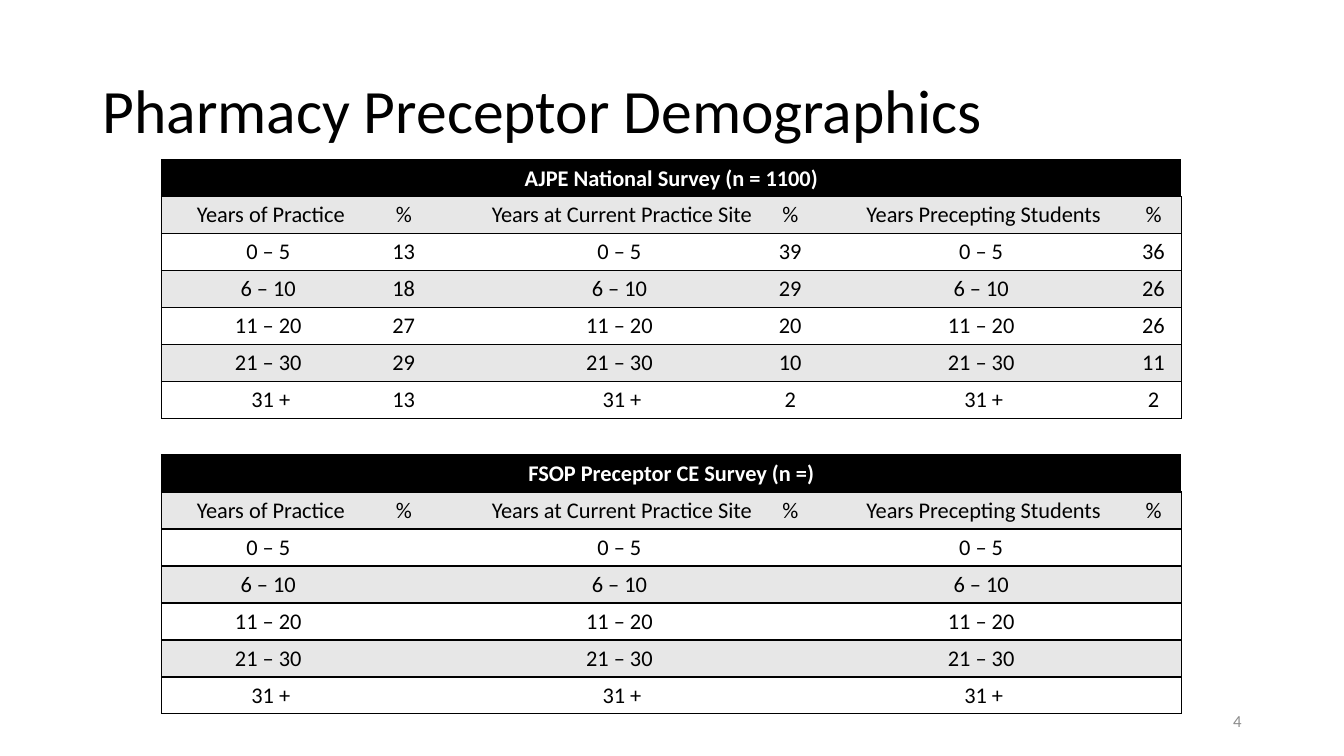
import pptx
import pptx.dml.color
import pptx.enum.text
import pptx.oxml.ns
import pptx.util
from lxml import etree

Pt = pptx.util.Pt
RGBColor = pptx.dml.color.RGBColor
ALIGN = pptx.enum.text.PP_ALIGN
MIDDLE = pptx.enum.text.MSO_ANCHOR.MIDDLE
qn = pptx.oxml.ns.qn

TITLE = "Pharmacy Preceptor Demographics"
SLIDE_NUMBER = "4"
HEADINGS = ["Years of Practice", "Years at Current Practice Site", "Years Precepting Students"]
YEAR_RANGES = ["0 – 5 ", "6 – 10 ", "11 – 20 ", "21 – 30 ", "31 +"]
# Each survey: heading, top edge, one list of percentages per year range
SURVEYS = [
    ("AJPE National Survey (n = 1100)", 114,
     [[13, 39, 36], [18, 29, 26], [27, 20, 26], [29, 10, 11], [13, 2, 2]]),
    ("FSOP Preceptor CE Survey (n =)", 325, [[""] * 3] * 5),
]

COLORS = {"black": "000000", "white": "FFFFFF", "band": "E7E7E7", "number": "8C8C8C"}
FONT = "Calibri"
TABLE_LEFT = 115.3
COLUMN_WIDTHS = [156.2, 33.8, 36, 205.9, 34.6, 19.4, 203, 39.6]
LABEL_COLUMNS = [0, 3, 6]
ROW_HEIGHT = 26.4
TABLE_TEXT_SIZE = 16
BORDER_WIDTH = 1
PLAIN_TABLE_STYLE = "{2D5ABB26-0587-4C30-8999-92F81FD0307C}"


def write(paragraph, text, size, color, alignment, bold=False):
    paragraph.alignment = alignment
    run = paragraph.add_run()
    run.text = text
    for name, value in {"name": FONT, "size": Pt(size), "bold": bold}.items():
        setattr(run.font, name, value)
    run.font.color.rgb = RGBColor.from_string(COLORS[color])


def add_borders(cell, sides):
    properties = cell._tc.get_or_add_tcPr()
    for side in sides:
        line = etree.SubElement(properties, qn("a:ln" + side), w=str(Pt(BORDER_WIDTH)))
        fill = etree.SubElement(line, qn("a:solidFill"))
        etree.SubElement(fill, qn("a:srgbClr"), val=COLORS["black"])


def survey_rows(heading, percentages):
    """Return the cell texts, with each label next to its percentage."""
    width = len(COLUMN_WIDTHS)
    rows = [[heading] + [""] * (width - 1)]
    body = [(HEADINGS, ["%"] * 3)]
    body += [([years] * 3, values) for years, values in zip(YEAR_RANGES, percentages)]
    for labels, values in body:
        row = [""] * width
        for column, label, value in zip(LABEL_COLUMNS, labels, values):
            row[column], row[column + 1] = label, str(value)
        rows.append(row)
    return rows


def add_survey_table(slide, heading, top, percentages):
    rows = survey_rows(heading, percentages)
    last_column = len(COLUMN_WIDTHS) - 1
    frame = slide.shapes.add_table(
        len(rows), len(COLUMN_WIDTHS), Pt(TABLE_LEFT), Pt(top),
        Pt(sum(COLUMN_WIDTHS)), Pt(ROW_HEIGHT * len(rows)))
    next(frame._element.iter(qn("a:tableStyleId"))).text = PLAIN_TABLE_STYLE
    table = frame.table
    for column, width in zip(table.columns, COLUMN_WIDTHS):
        column.width = Pt(width)
    for row_index, row in enumerate(rows):
        table.rows[row_index].height = Pt(ROW_HEIGHT)
        is_heading = row_index == 0
        fill = "black" if is_heading else "band" if row_index % 2 else "white"
        for column_index, text in enumerate(row):
            cell = table.cell(row_index, column_index)
            sides = ["L"] * (column_index == 0) + ["R"] * (column_index == last_column)
            add_borders(cell, sides + ["T", "B"])
            cell.fill.solid()
            cell.fill.fore_color.rgb = RGBColor.from_string(COLORS[fill])
            paragraph = cell.text_frame.paragraphs[0]
            if text:
                write(paragraph, text, TABLE_TEXT_SIZE,
                      "white" if is_heading else "black", ALIGN.CENTER, is_heading)
            else:
                etree.SubElement(paragraph._p, qn("a:endParaRPr"), sz=str(TABLE_TEXT_SIZE * 100))
    table.cell(0, 0).merge(table.cell(0, last_column))


def main():
    presentation = pptx.Presentation()
    presentation.slide_width, presentation.slide_height = Pt(960), Pt(540)
    slide = presentation.slides.add_slide(presentation.slide_layouts[5])

    title = slide.shapes.title
    number = slide.shapes.add_textbox(Pt(678), Pt(500.5), Pt(216), Pt(28.8))
    boxes = {"left": Pt(66), "top": Pt(28.8), "width": Pt(828), "height": Pt(104.4)}
    for name, value in boxes.items():
        setattr(title, name, value)
    for shape in (title, number):
        shape.text_frame.word_wrap = True
        shape.text_frame.vertical_anchor = MIDDLE
    title_paragraph = title.text_frame.paragraphs[0]
    title_paragraph.line_spacing = 0.9
    write(title_paragraph, TITLE, 44, "black", ALIGN.LEFT)
    write(number.text_frame.paragraphs[0], SLIDE_NUMBER, 12, "number", ALIGN.RIGHT)

    for heading, top, percentages in SURVEYS:
        add_survey_table(slide, heading, top, percentages)
    presentation.save("out.pptx")


if __name__ == "__main__":
    main()
